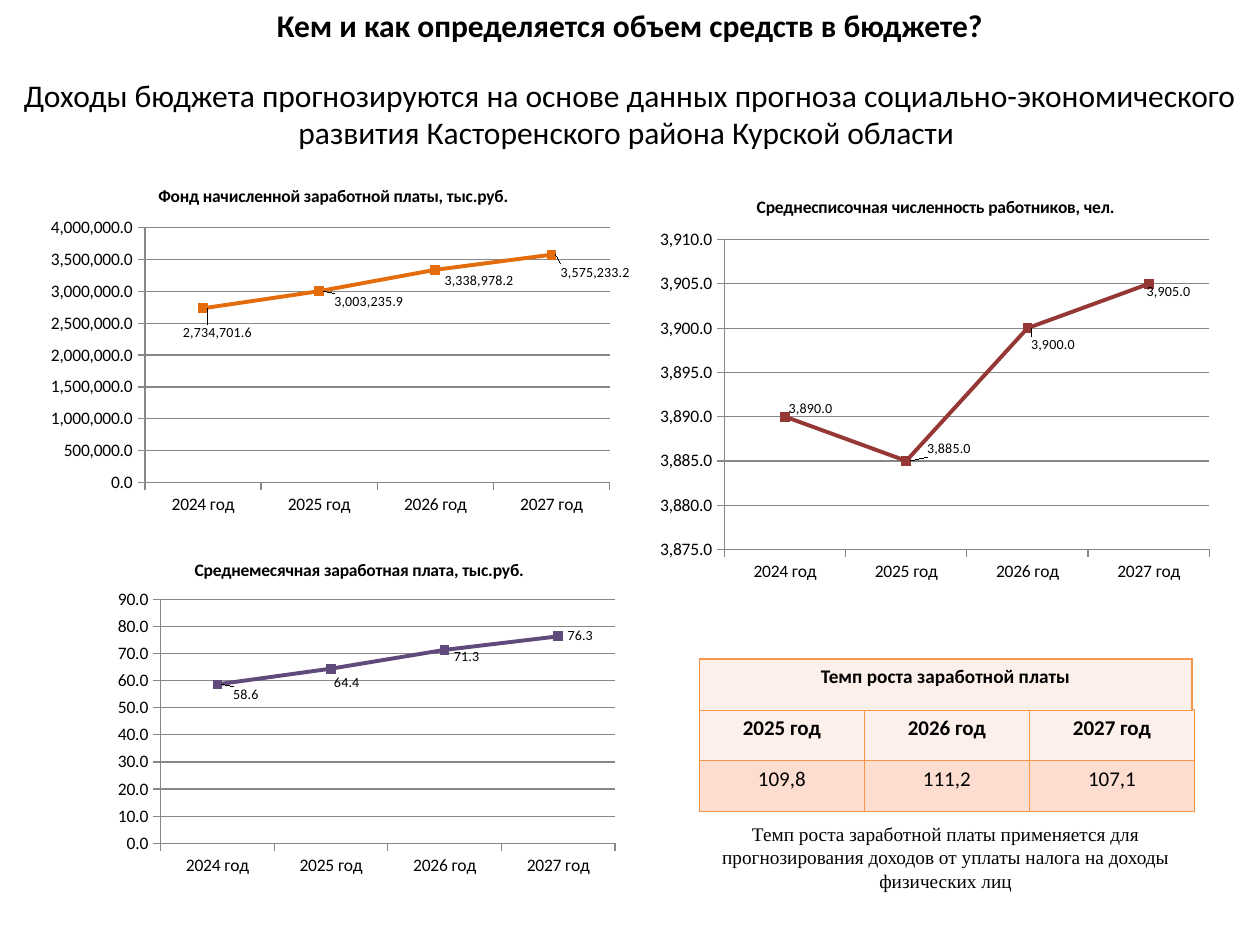
import pptx
import pptx.chart.data
import pptx.dml.color
import pptx.enum.chart
import pptx.enum.text
import pptx.oxml
import pptx.oxml.ns
import pptx.util

Inches = pptx.util.Inches
Pt = pptx.util.Pt
RGBColor = pptx.dml.color.RGBColor
XL = pptx.enum.chart

BLACK = RGBColor(0x00, 0x00, 0x00)
GRAY = RGBColor(0x87, 0x87, 0x87)
PURPLE = RGBColor(0x60, 0x4A, 0x7B)
ORANGE = RGBColor(0xE4, 0x6C, 0x0A)
MAROON = RGBColor(0x95, 0x37, 0x35)
EDGE = RGBColor(0xF7, 0x96, 0x46)
PALE = RGBColor(0xFD, 0xEF, 0xE9)
PEACH = RGBColor(0xFC, 0xDD, 0xCF)

FONT = "Calibri"
FORMAT = "#,##0.0"
YEARS = ["2024 год", "2025 год", "2026 год", "2027 год"]
CHARTS = [
    dict(title="Среднемесячная заработная плата, тыс.руб.",
         box=(0.31, 4.3, 5.08, 2.85), color=PURPLE,
         values=[58.6, 64.4, 71.3, 76.3], scale=(0, 90, 10),
         plot=(0.19, 0.16, 0.71, 0.68),
         shifts=[(0.01, 0.03), (-0.01, 0.04), (0, 0.02), (0, 0)]),
    dict(title="Фонд начисленной заработной платы, тыс.руб.",
         box=(0.31, 1.33, 4.69, 2.81), color=ORANGE,
         values=[2734701.6, 3003235.9, 3338978.2, 3575233.2],
         scale=(0, 4000000, 500000),
         plot=(0.18, 0.17, 0.79, 0.72),
         shifts=[(-0.05, 0.07), (0.01, 0.03), (0, 0.03), (0, 0.05)]),
    dict(title="Среднесписочная численность работников, чел.",
         box=(5.16, 1.41, 4.53, 3.28), color=MAROON,
         values=[3890, 3885, 3900, 3905], scale=(3875, 3910, 5),
         plot=(0.13, 0.15, 0.85, 0.75),
         shifts=[(-0.01, -0.02), (0.02, -0.03), (-0.01, 0.04), (-0.02, 0.02)]),
]


def style(font, size, bold=False, name=FONT):
    """Set the size, weight, face and black colour of a font."""
    font.size = Pt(size)
    font.bold = bold
    font.name = name
    font.color.rgb = BLACK


def write(frame, text, size=18, bold=False, name=FONT):
    """Fill a text frame with one centred paragraph."""
    frame.word_wrap = True
    line = frame.paragraphs[0]
    line.alignment = pptx.enum.text.PP_ALIGN.CENTER
    run = line.add_run()
    run.text = text
    style(run.font, size, bold, name)


def place(shape, box):
    """Move a shape to a box given in inches."""
    shape.left, shape.top, shape.width, shape.height = map(Inches, box)


def add_text(slide, box, text, **look):
    """Add a text box."""
    shape = slide.shapes.add_textbox(*map(Inches, box))
    write(shape.text_frame, text, **look)


def add_title(slide, box, text, **look):
    """Move and fill the title placeholder."""
    title = slide.shapes.title
    place(title, box)
    title.text_frame.vertical_anchor = pptx.enum.text.MSO_ANCHOR.TOP
    write(title.text_frame, text, **look)


def set_layout(parent, index, parts):
    """Give a chart element a manual layout."""
    for old in parent.findall(pptx.oxml.ns.qn("c:layout")):
        parent.remove(old)
    body = "".join(f'<c:{tag} val="{value}"/>' for tag, value in parts)
    parent.insert(index, pptx.oxml.parse_xml(
        f'<c:layout {pptx.oxml.ns.nsdecls("c")}>'
        f'<c:manualLayout>{body}</c:manualLayout></c:layout>'))


def format_axis(axis):
    """Give an axis small labels, grey lines and outer ticks."""
    style(axis.tick_labels.font, 10)
    axis.format.line.color.rgb = GRAY
    axis.format.line.width = Pt(0.75)
    axis.major_tick_mark = XL.XL_TICK_MARK.OUTSIDE
    axis.minor_tick_mark = XL.XL_TICK_MARK.NONE


def format_scale(axis, scale):
    """Set the range, number format and grid of a value axis."""
    axis.minimum_scale, axis.maximum_scale, axis.major_unit = scale
    axis.tick_labels.number_format = FORMAT
    axis.tick_labels.number_format_is_linked = False
    axis.has_major_gridlines = True
    axis.major_gridlines.format.line.color.rgb = GRAY
    axis.major_gridlines.format.line.width = Pt(0.75)


def format_line(line, color):
    """Colour a series and its square markers."""
    line.smooth = False
    line.format.line.color.rgb = color
    line.format.line.width = Pt(2.25)
    line.marker.style = XL.XL_MARKER_STYLE.SQUARE
    line.marker.size = 5
    line.marker.format.fill.solid()
    line.marker.format.fill.fore_color.rgb = color
    line.marker.format.line.color.rgb = color


def add_labels(chart, line, shifts):
    """Label each point and shift the labels off the line."""
    labels = line.data_labels
    labels.show_value = True
    labels.number_format = FORMAT
    labels.number_format_is_linked = False
    labels.position = XL.XL_LABEL_POSITION.RIGHT
    style(labels.font, 8)
    for index in range(len(shifts)):
        label = line.points[index].data_label
        style(label.font, 8)
        label.position = XL.XL_LABEL_POSITION.RIGHT
    for item, shift in zip(chart._chartSpace.xpath(".//c:dLbl"), shifts):
        set_layout(item, 1, zip("xy", shift))


def add_chart(slide, title, box, color, values, scale, plot, shifts):
    """Add a line chart with one labelled series."""
    data = pptx.chart.data.CategoryChartData(number_format=FORMAT)
    data.categories = YEARS
    data.add_series(title, values)
    chart = slide.shapes.add_chart(
        XL.XL_CHART_TYPE.LINE_MARKERS_STACKED, *map(Inches, box), data).chart
    style(chart.font, 18)
    chart.has_legend = False
    chart.has_title = True
    write(chart.chart_title.text_frame, title, size=10, bold=True)
    chart.plots[0].vary_by_categories = False
    format_axis(chart.category_axis)
    format_axis(chart.value_axis)
    format_scale(chart.value_axis, scale)
    line = chart.plots[0].series[0]
    format_line(line, color)
    add_labels(chart, line, shifts)
    area = chart._chartSpace.xpath(".//c:plotArea")[0]
    modes = [("layoutTarget", "inner"), ("xMode", "edge"), ("yMode", "edge")]
    set_layout(area, 0, modes + list(zip("xywh", plot)))


def add_border(cell):
    """Draw a thin line on each side of a cell."""
    props = cell._tc.get_or_add_tcPr()
    for index, side in enumerate("LRTB"):
        props.insert(index, pptx.oxml.parse_xml(
            f'<a:ln{side} {pptx.oxml.ns.nsdecls("a")} w="12700"><a:solidFill>'
            f'<a:srgbClr val="{EDGE}"/></a:solidFill></a:ln{side}>'))


def add_table(slide, box, rows):
    """Add a table from rows of texts, fill and text format."""
    table = slide.shapes.add_table(
        len(rows), len(rows[0][0]), *map(Inches, box)).table
    for r, (texts, fill, look) in enumerate(rows):
        for c, text in enumerate(texts):
            cell = table.cell(r, c)
            cell.fill.solid()
            cell.fill.fore_color.rgb = fill
            write(cell.text_frame, text, **look)
            add_border(cell)


def main():
    """Build the budget slide and save it."""
    deck = pptx.Presentation()
    deck.slide_width, deck.slide_height = Inches(10), Inches(7.5)
    slide = deck.slides.add_slide(deck.slide_layouts[5])
    add_text(slide, (0, 0.55, 10, 0.71),
             "Доходы бюджета прогнозируются на основе данных прогноза "
             "социально-экономического развития Касторенского района "
             "Курской области ")
    add_title(slide, (0, 0, 10, 0.4),
              "Кем и как определяется объем средств в бюджете?", bold=True)
    for chart in CHARTS:
        add_chart(slide, **chart)
    add_table(slide, (5.55, 5.63, 3.93, 0.81), [
        (YEARS[1:], PALE, dict(size=12, bold=True)),
        (["109,8", "111,2", "107,1"], PEACH, dict(size=12))])
    add_table(slide, (5.55, 5.23, 3.91, 0.41), [
        (["Темп роста заработной платы"], PALE, dict(size=11, bold=True))])
    add_text(slide, (5.55, 6.48, 3.91, 0.66),
             "Темп роста заработной платы применяется для прогнозирования "
             "доходов от уплаты налога на доходы физических лиц",
             size=11, name="Times New Roman")
    deck.save("out.pptx")


if __name__ == "__main__":
    main()
